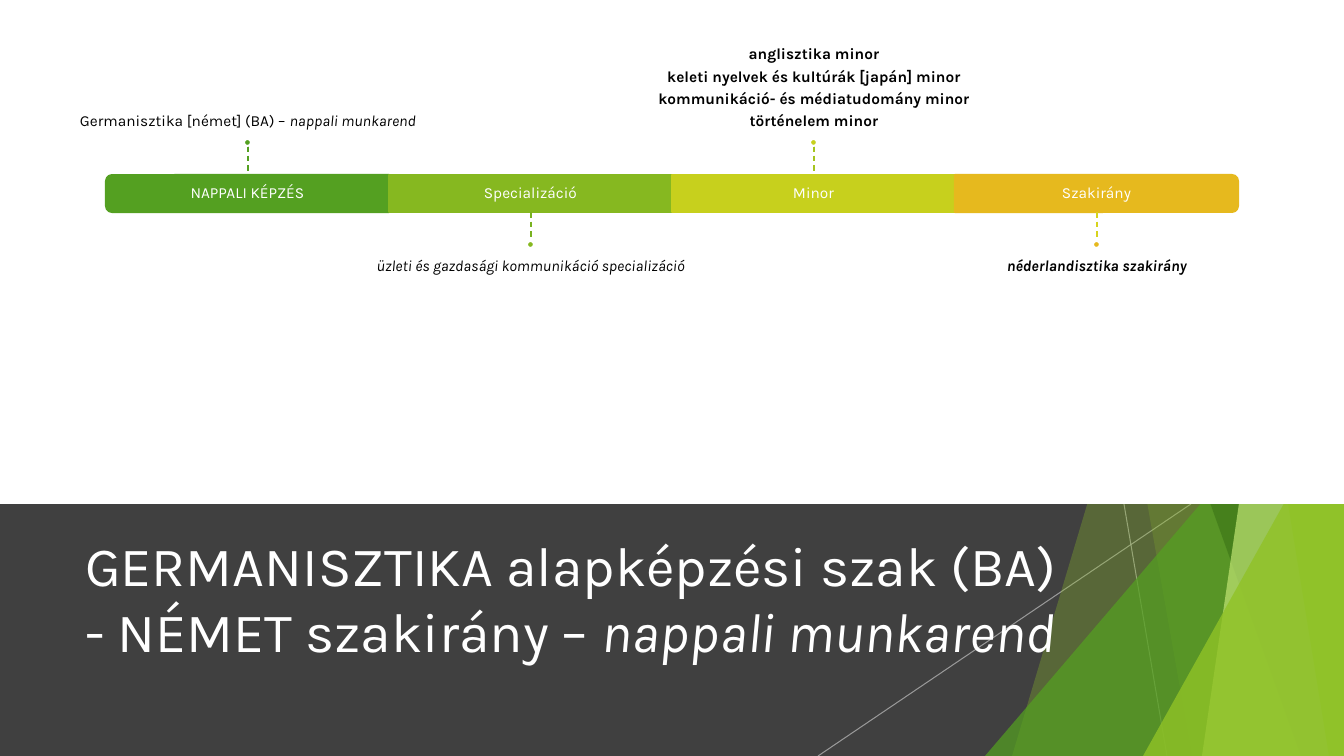
from lxml.etree import SubElement
from pptx import Presentation
from pptx.dml.color import RGBColor
from pptx.enum.dml import MSO_LINE
from pptx.enum.shapes import MSO_CONNECTOR, MSO_SHAPE, MSO_SHAPE_TYPE
from pptx.enum.text import MSO_ANCHOR, PP_ALIGN
from pptx.oxml.ns import qn
from pptx.util import Pt

PX = 9071
WIDTH, HEIGHT, SPLIT = 1344, 756, 504
FONT = "Karla"
COLORS = {
    "white": "FFFFFF", "black": "000000", "dark": "404040", "ray": "BFBFBF",
    "leaf": "90C226", "green": "54A021", "forest": "3F7819", "pale": "C0E474",
    "olive": "86B820", "lime": "C7D01D", "gold": "E6B91E",
    "olive stem": "79B220", "lime stem": "A5C41F", "gold stem": "D7D31D",
}
COLORS = {name: RGBColor.from_string(value) for name, value in COLORS.items()}


def fade(shape, percent):
    color = shape._element.spPr.find(".//" + qn("a:srgbClr"))
    SubElement(color, qn("a:alpha")).set("val", str(percent * 1000))


def write(left, top, width, height, paragraphs, size, color, anchor, insets):
    box = page.shapes.add_textbox(left * PX, top * PX, width * PX, height * PX)
    frame = box.text_frame
    frame.word_wrap = True
    frame.vertical_anchor = anchor
    frame.margin_left, frame.margin_top, frame.margin_right, frame.margin_bottom = (
        inset * PX for inset in insets)
    for index, spans in enumerate(paragraphs):
        para = frame.add_paragraph() if index else frame.paragraphs[0]
        for text, style in spans:
            span = para.add_run()
            span.text = text
            span.font.name = FONT
            span.font.size = Pt(size)
            span.font.bold = "b" in style
            span.font.italic = "i" in style
            span.font.color.rgb = COLORS[color]
    return frame


deck = Presentation()
deck.slide_width = WIDTH * PX
deck.slide_height = HEIGHT * PX
page = deck.slides.add_slide(deck.slide_layouts[6])

band = page.shapes.add_shape(
    MSO_SHAPE.RECTANGLE, 0, SPLIT * PX, WIDTH * PX, (HEIGHT - SPLIT) * PX)
band.fill.solid()
band.fill.fore_color.rgb = COLORS["dark"]
band.line.fill.background()

for top_x, bottom_x in [(1124, 1167), (1191, 818)]:
    ray = page.shapes.add_connector(
        MSO_CONNECTOR.STRAIGHT, top_x * PX, SPLIT * PX, bottom_x * PX, HEIGHT * PX)
    ray.line.color.rgb = COLORS["ray"]
    ray.line.width = Pt(0.75)
    fade(ray, 70)

facets = [
    ("strip", 1238, 1012, "leaf", 30),
    ("strip", 1058, 1192, "leaf", 20),
    ("triangle", 985, 336, "green", 72),
    ("strip", 1029, 1301, "forest", 70),
    ("strip", 1313, 1202, "pale", 70),
    ("strip", 1206, 1329, "leaf", 65),
    ("triangle", 1143, 396, "leaf", 80),
]
for kind, first, second, color, opacity in facets:
    if kind == "strip":
        outline = page.shapes.build_freeform(first, -1, scale=PX)
        outline.add_line_segments([(WIDTH, -1), (WIDTH, HEIGHT), (second, HEIGHT)])
        facet = outline.convert_to_shape()
    else:
        facet = page.shapes.add_shape(
            MSO_SHAPE.ISOSCELES_TRIANGLE, first * PX, second * PX,
            (WIDTH - first) * PX, (HEIGHT - second) * PX)
        facet.adjustments[0] = 1
    facet.fill.solid()
    facet.fill.fore_color.rgb = COLORS[color]
    facet.line.fill.background()
    fade(facet, opacity)

title = [[("GERMANISZTIKA alapképzési szak (BA) - NÉMET szakirány – ", ""),
          ("nappali munkarend", "i")]]
write(75, 525, 1008, 145, title, 39.6, "white", MSO_ANCHOR.MIDDLE, (10, 5, 10, 5))

panel = page.shapes.add_shape(MSO_SHAPE.RECTANGLE, 0, 0, WIDTH * PX, SPLIT * PX)
panel.fill.solid()
panel.fill.fore_color.rgb = COLORS["white"]
panel.line.fill.background()

BAR_LEFT, BAR_TOP, BAR_WIDTH, BAR_HEIGHT = 106, 175, 283, 37
STEM, DOT, INSET = 29, 7, 9
NOTE_WIDTH, NOTE_HEIGHT = 472, 129

stages = [
    ("NAPPALI KÉPZÉS", "green", "green", 270,
     [[("Germanisztika [német] (BA) – ", ""), ("nappali munkarend", "i")]]),
    ("Specializáció", "olive", "olive stem", 0,
     [[("üzleti és gazdasági kommunikáció specializáció", "i")]]),
    ("Minor", "lime", "lime stem", 0,
     [[("anglisztika minor", "b")],
      [("keleti nyelvek és kultúrák [japán] minor", "b")],
      [("kommunikáció- és médiatudomány minor", "b")],
      [("történelem minor", "b")]]),
    ("Szakirány", "gold", "gold stem", 90,
     [[("néderlandisztika szakirány", "bi")]]),
]
for index, (name, color, stem_color, turn, note) in enumerate(stages):
    left = BAR_LEFT + index * BAR_WIDTH
    center = left + BAR_WIDTH // 2 + 1
    above = index % 2 == 0

    if turn:
        shift = (BAR_WIDTH - BAR_HEIGHT) // 2
        bar = page.shapes.add_shape(
            MSO_SHAPE.ROUND_2_SAME_RECTANGLE, (left + shift) * PX,
            (BAR_TOP - shift) * PX, BAR_HEIGHT * PX, BAR_WIDTH * PX)
        bar.rotation = turn
    else:
        bar = page.shapes.add_shape(
            MSO_SHAPE.RECTANGLE, left * PX, BAR_TOP * PX, BAR_WIDTH * PX, BAR_HEIGHT * PX)
    bar.fill.solid()
    bar.fill.fore_color.rgb = COLORS[color]
    bar.line.color.rgb = COLORS[color]
    bar.line.width = Pt(1.5)

    label_frame = write(left, BAR_TOP, BAR_WIDTH, BAR_HEIGHT, [[(name, "")]], 11,
                        "white", MSO_ANCHOR.MIDDLE, (INSET,) * 4)
    if above:
        note_top, note_anchor, note_insets = 10, MSO_ANCHOR.BOTTOM, (0, 0, 0, INSET)
        stem_top = BAR_TOP - STEM
        dot_top = stem_top - DOT
    else:
        note_top, note_anchor, note_insets = 249, MSO_ANCHOR.TOP, (0, INSET, 0, 0)
        stem_top = BAR_TOP + BAR_HEIGHT
        dot_top = stem_top + STEM
    note_frame = write(center - NOTE_WIDTH // 2, note_top, NOTE_WIDTH, NOTE_HEIGHT,
                       note, 11, "black", note_anchor, note_insets)
    for para in label_frame.paragraphs + note_frame.paragraphs:
        para.alignment = PP_ALIGN.CENTER
        para.line_spacing = 0.9
        para.space_after = Pt(4)

    stem = page.shapes.add_connector(
        MSO_CONNECTOR.STRAIGHT, center * PX, stem_top * PX,
        center * PX, (stem_top + STEM) * PX)
    stem.line.color.rgb = COLORS[stem_color]
    stem.line.width = Pt(1)
    stem.line.dash_style = MSO_LINE.DASH

    dot = page.shapes.add_shape(
        MSO_SHAPE.OVAL, (center - 4) * PX, dot_top * PX, DOT * PX, DOT * PX)
    dot.fill.solid()
    dot.fill.fore_color.rgb = COLORS[color]
    dot.line.color.rgb = COLORS["white"]
    dot.line.width = Pt(1.5)

for shape in page.shapes:
    if shape.shape_type == MSO_SHAPE_TYPE.LINE:
        SubElement(shape._element.spPr, qn("a:effectLst"))
    else:
        shape.shadow.inherit = False

deck.save("out.pptx")
